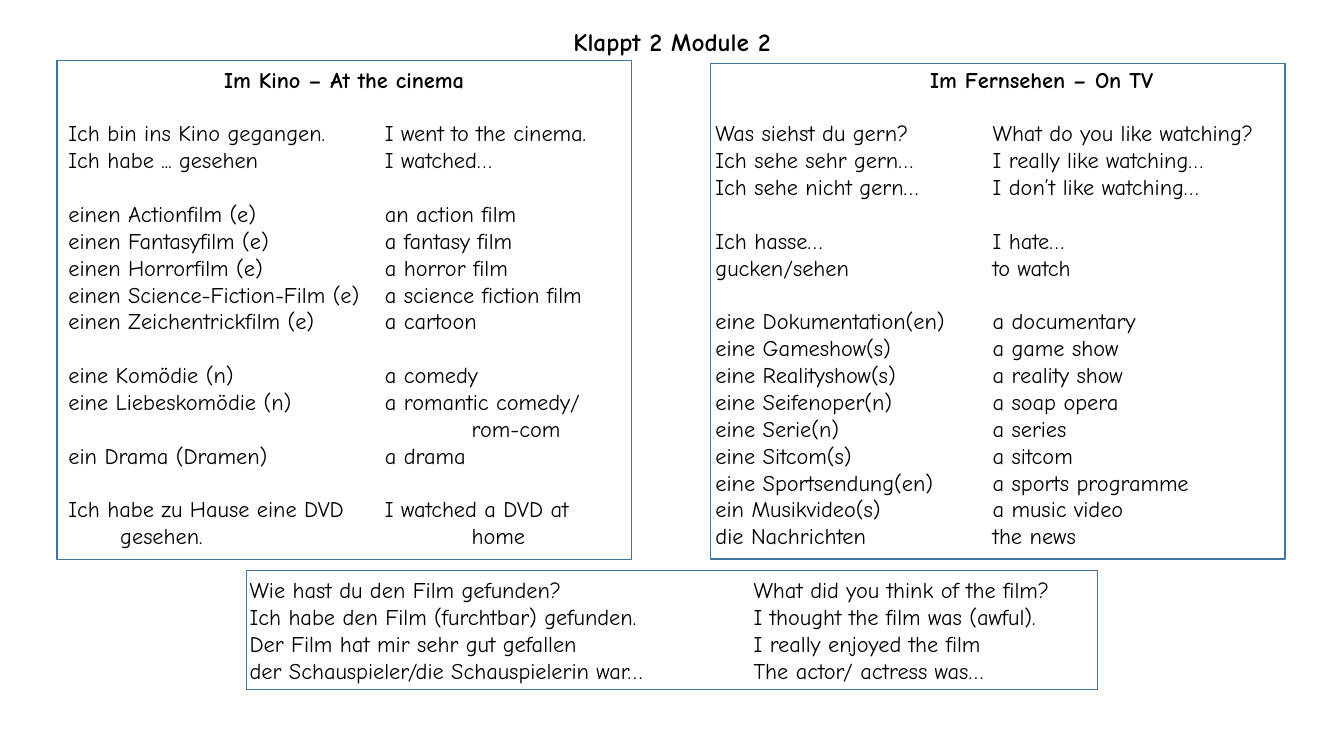
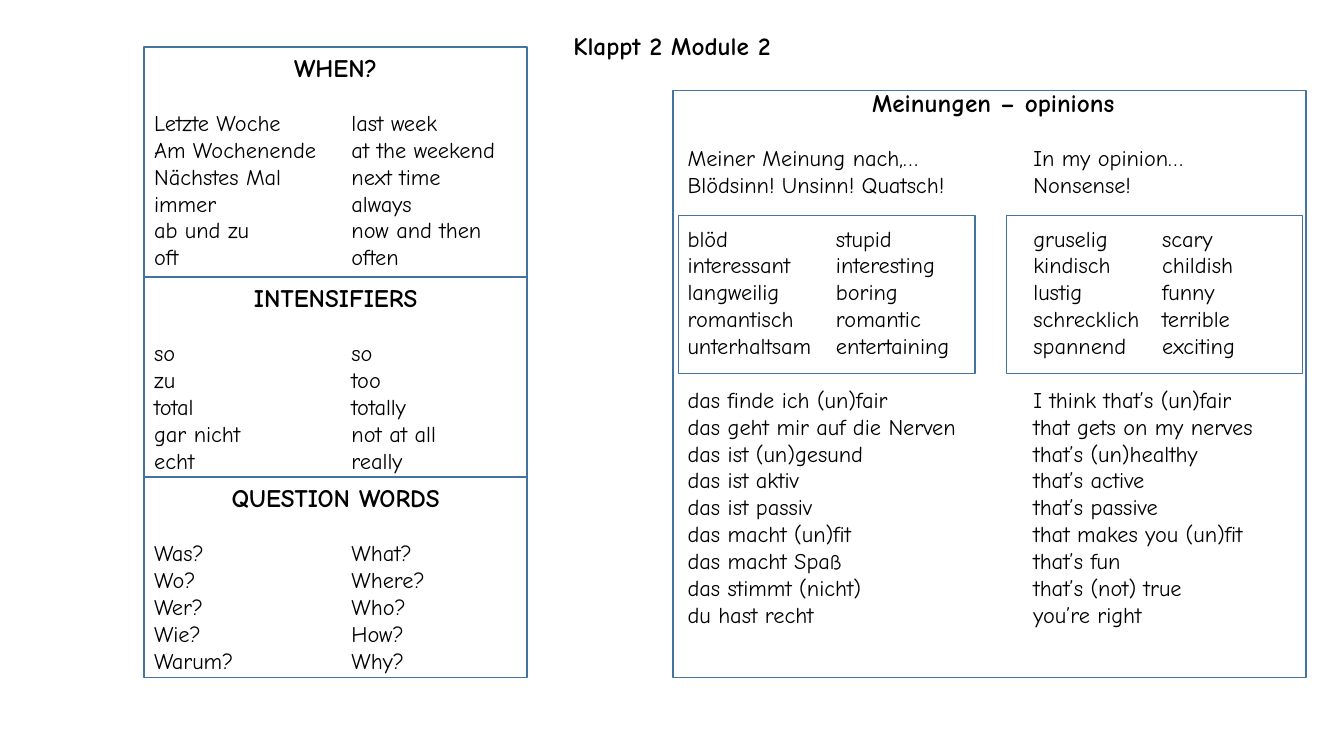
from dataclasses import dataclass
from typing import NamedTuple

import lxml.etree
import pptx
import pptx.dml.color
import pptx.enum.shapes
import pptx.enum.text
import pptx.oxml.ns
import pptx.util

Pt = pptx.util.Pt
ALIGN = pptx.enum.text.PP_ALIGN
COLORS = {"text": "000000", "frame": "43739E"}
FONT = "Comic Neue"
GAP = 19.2  # one 16 pt line
HANG = (37, 288)  # stops of a line that carries on the one above
BODY = {"size": Pt(16), "bold": False}
TITLE = {"size": Pt(18), "bold": True}


class Box(NamedTuple):
    left: float
    top: float
    width: float
    height: float


@dataclass
class Group:
    """Lines set together; "|" parts the columns, a leading one marks a hanging line."""
    stops: tuple[float, ...]
    lines: tuple[str, ...]


@dataclass
class Panel:
    area: Box
    frames: tuple[Box, ...]
    groups: tuple[Group, ...]
    head: str = ""
    size: int = 18


@dataclass
class Page:
    top: float
    panels: tuple[Panel, ...]


def color(name: str) -> pptx.dml.color.RGBColor:
    return pptx.dml.color.RGBColor.from_string(COLORS[name])


def write(para, text: str, style: dict) -> None:
    run = para.add_run()
    run.text = text
    for key, value in {"name": FONT, **style}.items():
        setattr(run.font, key, value)
    run.font.color.rgb = color("text")


def set_tabs(para, stops: tuple[float, ...]) -> None:
    qn = pptx.oxml.ns.qn
    tabs = lxml.etree.SubElement(para._p.get_or_add_pPr(), qn("a:tabLst"))
    for stop in stops:
        lxml.etree.SubElement(tabs, qn("a:tab"), pos=str(int(Pt(stop))), algn="l")


def add_title(slide, top: float) -> None:
    title = slide.shapes.title
    place = {"left": 373, "top": top, "width": 214, "height": 29}
    for key, value in place.items():
        setattr(title, key, Pt(value))
    frame = title.text_frame
    frame.auto_size = pptx.enum.text.MSO_AUTO_SIZE.NONE
    frame.vertical_anchor = pptx.enum.text.MSO_ANCHOR.TOP
    para = frame.paragraphs[0]
    para.alignment = ALIGN.CENTER
    write(para, "Klappt 2 Module 2", TITLE)


def add_frame(slide, box: Box) -> None:
    kind = pptx.enum.shapes.MSO_SHAPE.RECTANGLE
    rect = slide.shapes.add_shape(kind, *map(Pt, box))
    rect.shadow.inherit = False
    rect.fill.background()
    rect.line.color.rgb = color("frame")
    rect.line.width = Pt(1)


def add_panel(slide, panel: Panel) -> None:
    frame = slide.shapes.add_textbox(*map(Pt, panel.area)).text_frame
    frame.word_wrap = True
    para = frame.paragraphs[0]
    fresh = True
    if panel.head:
        para.alignment = ALIGN.CENTER
        write(para, panel.head, {"size": Pt(panel.size), "bold": True})
        fresh = False
    for group in panel.groups:
        for index, line in enumerate(group.lines):
            if not fresh:
                para = frame.add_paragraph()
                para.space_before = Pt(0 if index else GAP)
            fresh = False
            set_tabs(para, HANG if line.startswith("|") else group.stops)
            write(para, line.replace("|", "\t"), BODY)
    for box in panel.frames:
        add_frame(slide, box)


def side(top: float, height: float, head: str, lines: tuple[str, ...]) -> Panel:
    """A panel of the left column on the second page."""
    box = Box(103, top, 273.6, height)
    return Panel(box, (box,), (Group((141,), lines),), head)


KINO, TV, FILM, VIEW = (226,), (198,), (360,), (247,)
WORDS = (106, 247, 339)

CINEMA = Panel(
    Box(41.8, 43.4, 408, 356.4), (Box(40.8, 43.2, 410.4, 356.4),),
    (
        Group(KINO, (
            "Ich bin ins Kino gegangen.|I went to the cinema.",
            "Ich habe ... gesehen|I watched…",
        )),
        Group(KINO, (
            "einen Actionfilm (e)|an action film",
            "einen Fantasyfilm (e)|a fantasy film",
            "einen Horrorfilm (e)|a horror film",
            "einen Science-Fiction-Film (e)|a science fiction film",
            "einen Zeichentrickfilm (e)|a cartoon",
        )),
        Group(KINO, (
            "eine Komödie (n)|a comedy",
            "eine Liebeskomödie (n)|a romantic comedy/",
            "||rom-com",
            "ein Drama (Dramen)|a drama",
        )),
        Group(KINO, (
            "Ich habe zu Hause eine DVD|I watched a DVD at",
            "|gesehen.|home",
        )),
    ),
    "Im Kino – At the cinema", 16)

SCREEN = Panel(
    Box(504, 43.4, 480.2, 356.4), (Box(507.6, 45.2, 410.4, 354.2),),
    (
        Group(TV, (
            "Was siehst du gern?|What do you like watching?",
            "Ich sehe sehr gern…|I really like watching…",
            "Ich sehe nicht gern…|I don’t like watching…",
        )),
        Group(TV, (
            "Ich hasse…|I hate…",
            "gucken/sehen|to watch",
        )),
        Group(TV, (
            "eine Dokumentation(en)|a documentary",
            "eine Gameshow(s)|a game show",
            "eine Realityshow(s)|a reality show",
            "eine Seifenoper(n)|a soap opera",
            "eine Serie(n)|a series",
            "eine Sitcom(s)|a sitcom",
            "eine Sportsendung(en)|a sports programme",
            "ein Musikvideo(s)|a music video",
            "die Nachrichten|the news",
        )),
    ),
    "Im Fernsehen – On TV", 16)

REVIEW = Panel(
    Box(171.2, 408.2, 617.8, 85), (Box(176.2, 407.5, 607.7, 85),),
    (
        Group(FILM, (
            "Wie hast du den Film gefunden?|What did you think of the film?",
            "Ich habe den Film (furchtbar) gefunden.|I thought the film was (awful).",
            "Der Film hat mir sehr gut gefallen|I really enjoyed the film",
            "der Schauspieler/die Schauspielerin war…|The actor/ actress was…",
        )),
    ))

OPINIONS = Panel(
    Box(484.1, 58.6, 450.7, 416.9),
    (
        Box(480.8, 64.8, 452.2, 419),
        *(Box(left, 154, 211.7, 113) for left in (484.7, 718.8)),
    ),
    (
        Group(VIEW, (
            "Meiner Meinung nach,…|In my opinion…",
            "Blödsinn! Unsinn! Quatsch!|Nonsense!",
        )),
        Group(WORDS, (
            "blöd|stupid|gruselig|scary",
            "interessant|interesting|kindisch|childish",
            "langweilig|boring|lustig|funny",
            "romantisch|romantic|schrecklich|terrible",
            "unterhaltsam|entertaining|spannend|exciting",
        )),
        Group(VIEW, (
            "das finde ich (un)fair|I think that’s (un)fair",
            "das geht mir auf die Nerven|that gets on my nerves",
            "das ist (un)gesund|that’s (un)healthy",
            "das ist aktiv|that’s active",
            "das ist passiv|that’s passive",
            "das macht (un)fit|that makes you (un)fit",
            "das macht Spaß|that’s fun",
            "das stimmt (nicht)|that’s (not) true",
            "du hast recht|you’re right",
        )),
    ),
    "Meinungen – opinions")

PAGES = (
    Page(15.1, (CINEMA, SCREEN, REVIEW)),
    Page(18, (
        side(33.6, 164.4, "WHEN?", (
            "Letzte Woche|last week",
            "Am Wochenende|at the weekend",
            "Nächstes Mal|next time",
            "immer|always",
            "ab und zu|now and then",
            "oft|often",
        )),
        side(198, 142.8, "INTENSIFIERS", (
            "so|so",
            "zu|too",
            "total|totally",
            "gar nicht|not at all",
            "echt|really",
        )),
        side(340.8, 143, "QUESTION WORDS", (
            "Was?|What?",
            "Wo?|Where?",
            "Wer?|Who?",
            "Wie?|How?",
            "Warum?|Why?",
        )),
        OPINIONS,
    )),
)


def main() -> None:
    deck = pptx.Presentation()
    deck.slide_width, deck.slide_height = Pt(960), Pt(540)
    for page in PAGES:
        slide = deck.slides.add_slide(deck.slide_layouts[5])
        add_title(slide, page.top)
        for panel in page.panels:
            add_panel(slide, panel)
    deck.save("out.pptx")


if __name__ == "__main__":
    main()
